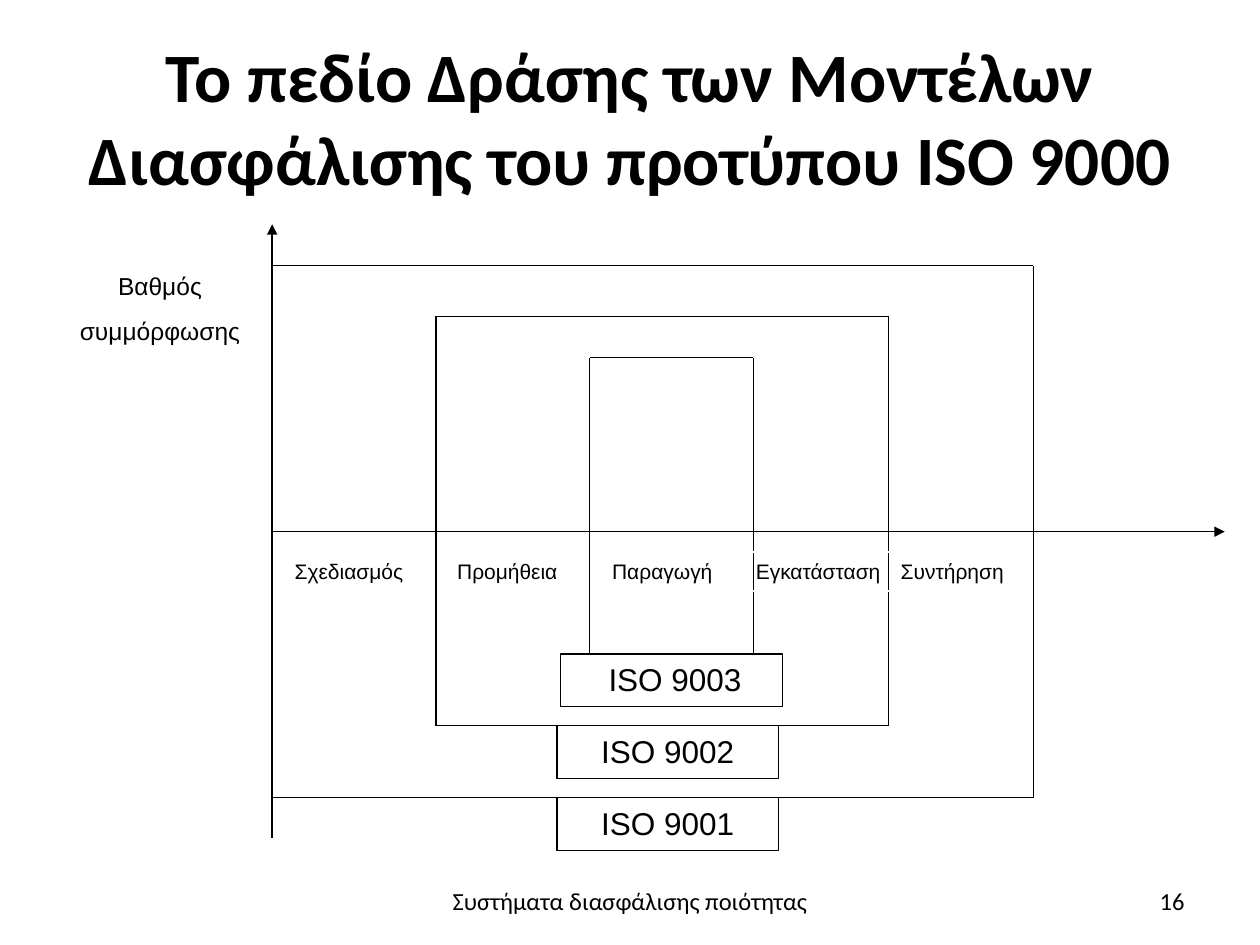
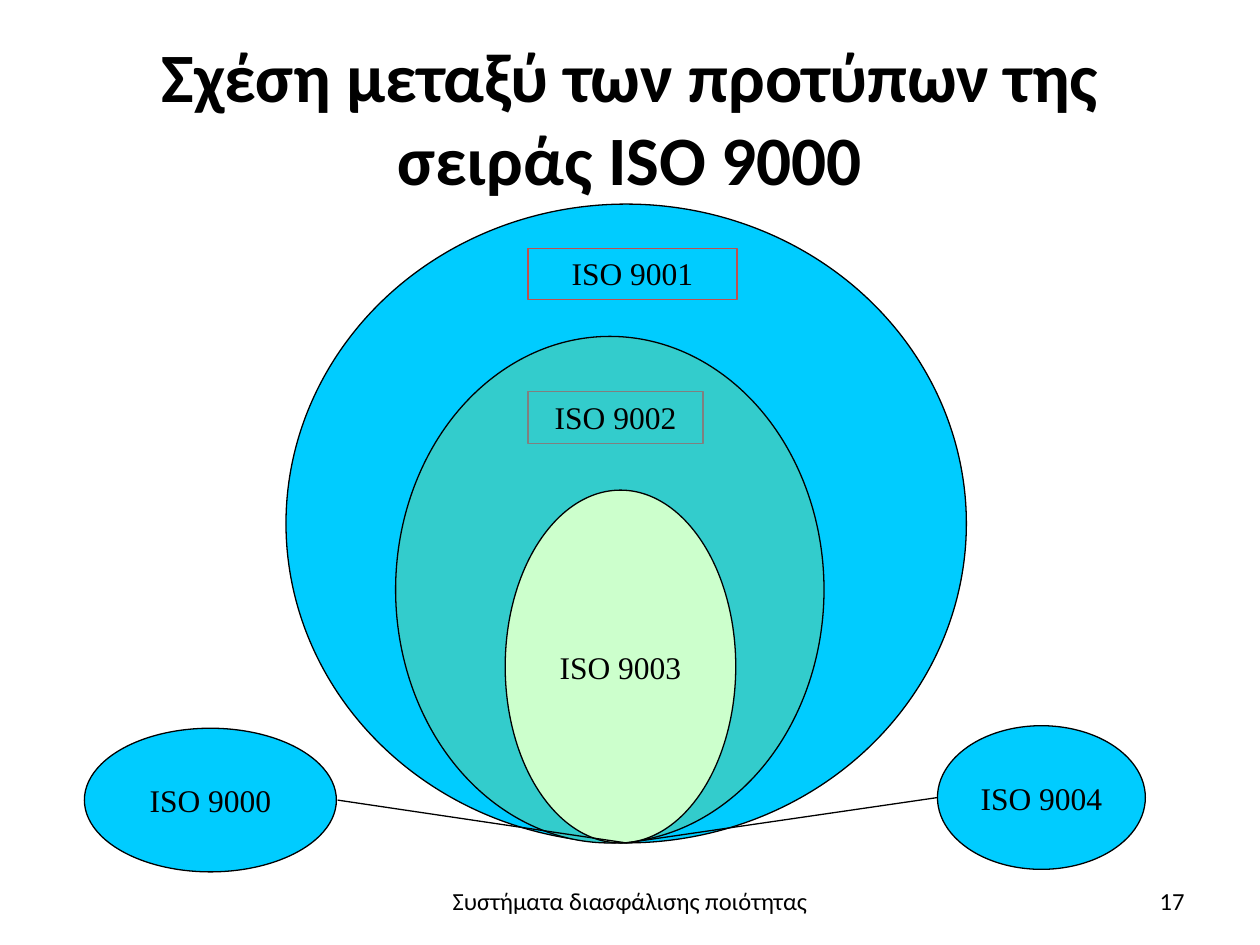
import pptx
import pptx.util
import pptx.dml.color
import pptx.enum.shapes
import pptx.enum.text
import pptx.oxml.ns
from lxml import etree

Inches = pptx.util.Inches
Pt = pptx.util.Pt
SHAPE = pptx.enum.shapes.MSO_SHAPE
ALIGN = pptx.enum.text.PP_ALIGN
ANCHOR = pptx.enum.text.MSO_ANCHOR

COLORS = {
    "ink": "000000",
    "paper": "FFFFFF",
    "sky": "00CCFF",
    "teal": "33CCCC",
    "mint": "CCFFCC",
    "grey": "808080",
    "red": "C0504D",
}
FOOTER = "Συστήματα διασφάλισης ποιότητας"


def color(name):
    return pptx.dml.color.RGBColor.from_string(COLORS[name])


def write(sp, text, font="Arial", size=18, bold=False, align=ALIGN.CENTER,
          anchor=ANCHOR.TOP, wrap=True, gap=0, left=0.1):
    tf = sp.text_frame
    tf.word_wrap = wrap
    tf.vertical_anchor = anchor
    tf.margin_left = Inches(left)
    tf.margin_right = Inches(0.1)
    tf.margin_top = tf.margin_bottom = Inches(0.05)
    for i, content in enumerate(text.split("\n")):
        p = tf.add_paragraph() if i else tf.paragraphs[0]
        p.alignment = align
        if i:
            p.space_before = Pt(gap)
        r = p.add_run()
        r.text = content
        r.font.name = font
        r.font.size = Pt(size)
        r.font.bold = bold
        r.font.color.rgb = color("ink")


def add_text(s, box, text, **fmt):
    write(s.shapes.add_textbox(*map(Inches, box)), text, **fmt)


def add_shape(s, kind, box, text="", fill=None, line="ink", **fmt):
    sp = s.shapes.add_shape(kind, *map(Inches, box))
    sp.shadow.inherit = False
    if fill:
        sp.fill.solid()
        sp.fill.fore_color.rgb = color(fill)
    else:
        sp.fill.background()
    sp.line.color.rgb = color(line)
    sp.line.width = Pt(0.75)
    if text:
        write(sp, text, **fmt)


def add_line(s, x1, y1, x2, y2, arrow=False):
    c = s.shapes.add_connector(pptx.enum.shapes.MSO_CONNECTOR.STRAIGHT,
                               *map(Inches, (x1, y1, x2, y2)))
    c.line.color.rgb = color("ink")
    c.line.width = Pt(0.75)
    qn = pptx.oxml.ns.qn
    if arrow:
        etree.SubElement(c.line._get_or_add_ln(), qn("a:tailEnd"), type="triangle")
    etree.SubElement(c._element.spPr, qn("a:effectLst"))


def add_slide(prs, title, number):
    s = prs.slides.add_slide(prs.slide_layouts[5])
    sp = s.shapes.title
    sp.left, sp.top, sp.width, sp.height = map(Inches, (0.5, 0.3, 9, 1.25))
    write(sp, title, font="Calibri", size=39.6, bold=True, anchor=ANCHOR.MIDDLE)
    small = {"font": "Calibri", "size": 14, "anchor": ANCHOR.MIDDLE}
    add_text(s, (2.44, 6.95, 5.12, 0.4), FOOTER, **small)
    add_text(s, (7.17, 6.95, 2.33, 0.4), str(number), align=ALIGN.RIGHT, **small)
    return s


def add_frame(s, left, top, right, bottom, axis_y, sides):
    for y in (top, bottom):
        add_line(s, left, y, right, y)
    for x in sides:
        for y in (top, bottom):
            add_line(s, x, axis_y, x, y)


def build_scope(prs):
    s = add_slide(prs, "Το πεδίο Δράσης των Μοντέλων Διασφάλισης του προτύπου ISO 9000", 16)
    axis_x, axis_y = 2.16, 4.22
    add_line(s, axis_x, axis_y, 9.72, axis_y, arrow=True)
    add_line(s, axis_x, 6.65, axis_x, 1.78, arrow=True)

    add_frame(s, axis_x, 2.11, 8.2, 6.33, axis_y, sides=(8.2,))
    add_frame(s, 3.46, 2.51, 7.05, 5.76, axis_y, sides=(3.46, 7.05))
    add_frame(s, 4.68, 2.84, 5.98, 5.19, axis_y, sides=(4.68, 5.98))

    for x, y, label, fmt in (
        (4.42, 6.33, "ISO 9001", {}),
        (4.42, 5.76, "ISO 9002", {}),
        (4.45, 5.19, "ISO 9003", {"align": ALIGN.LEFT, "left": 0.38}),
    ):
        add_shape(s, SHAPE.RECTANGLE, (x, y, 1.76, 0.42), label, **fmt)

    for x, stage in ((2.24, "Σχεδιασμός"), (3.53, "Προμήθεια"),
                     (4.76, "Παραγωγή"), (7.05, "Συντήρηση")):
        add_text(s, (x, 4.38, 1.15, 0.31), stage, size=12, align=ALIGN.LEFT)
    add_shape(s, SHAPE.RECTANGLE, (5.9, 4.38, 1.22, 0.31), "Εγκατάσταση",
              line="paper", size=12, align=ALIGN.LEFT)
    add_shape(s, SHAPE.RECTANGLE, (0.43, 2.1, 1.68, 0.72), "Βαθμός\nσυμμόρφωσης",
              line="paper", size=14, gap=8.8)


def build_relations(prs):
    s = add_slide(prs, "Σχέση μεταξύ των προτύπων της σειράς ISO 9000", 17)
    serif = {"font": "Times New Roman"}
    for box, fill, label in (
        ((2.27, 1.62, 5.4, 5.07), "sky", ""),
        ((3.14, 2.67, 3.4, 4.02), "teal", ""),
        ((4.01, 3.89, 1.83, 2.8), "mint", "ISO 9003"),
        ((0.67, 5.78, 2, 1.14), "sky", "ISO 9000"),
        ((7.44, 5.76, 1.65, 1.14), "sky", "ISO 9004"),
    ):
        add_shape(s, SHAPE.OVAL, box, label, fill=fill,
                  anchor=ANCHOR.MIDDLE, wrap=False, **serif)
    add_shape(s, SHAPE.RECTANGLE, (4.19, 3.11, 1.39, 0.41), "ISO 9002", line="grey", **serif)
    add_shape(s, SHAPE.RECTANGLE, (4.19, 1.97, 1.66, 0.41), "ISO 9001", line="red", **serif)
    for x, y in ((2.68, 6.35), (7.44, 6.33)):
        add_line(s, x, y, 4.97, 6.69)


def main():
    prs = pptx.Presentation()
    prs.slide_width, prs.slide_height = Inches(10), Inches(7.5)
    build_scope(prs)
    build_relations(prs)
    prs.save("out.pptx")


if __name__ == "__main__":
    main()
